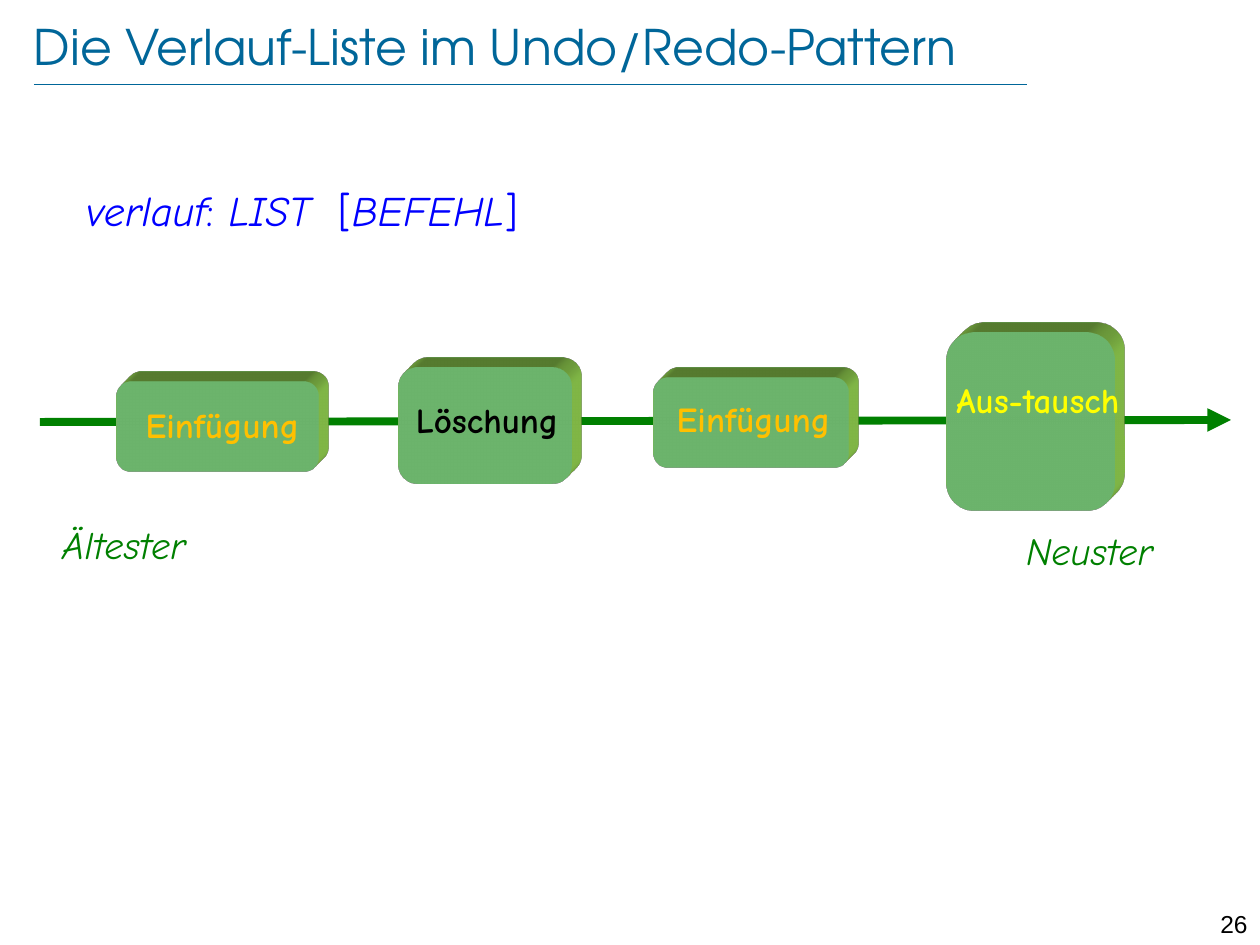
from dataclasses import dataclass

from lxml import etree
from pptx import Presentation
from pptx.dml.color import RGBColor
from pptx.enum.shapes import MSO_CONNECTOR, MSO_SHAPE
from pptx.enum.text import MSO_ANCHOR, PP_ALIGN
from pptx.oxml import parse_xml
from pptx.oxml.ns import nsdecls, qn
from pptx.util import Emu, Pt

LEFT, MID, RIGHT = PP_ALIGN.LEFT, PP_ALIGN.CENTER, PP_ALIGN.RIGHT
TOP, MIDDLE = MSO_ANCHOR.TOP, MSO_ANCHOR.MIDDLE
ROUND, LINE = MSO_SHAPE.ROUNDED_RECTANGLE, MSO_CONNECTOR.STRAIGHT

TEAL = RGBColor(0x00, 0x66, 0x99)
BLUE = RGBColor(0x00, 0x00, 0xFF)
GREEN = RGBColor(0x00, 0x80, 0x00)
BLACK = RGBColor(0x00, 0x00, 0x00)
ORANGE = RGBColor(0xFF, 0xC0, 0x00)
YELLOW = RGBColor(0xFF, 0xFF, 0x00)
MINT = RGBColor(0x99, 0xFF, 0x99)
LIME = RGBColor(0x92, 0xD0, 0x50)

COMIC, TITLE, SANS = "Comic Neue", "TeX Gyre Adventor", "Arial"
CURVE = 0.167
DEPTH = 28


def px(n: int) -> Emu:
    return Emu(round(n * 914400 / 126))


@dataclass
class Area:
    x: int
    y: int
    w: int
    h: int

    def emu(self) -> tuple:
        return px(self.x), px(self.y), px(self.w), px(self.h)


@dataclass
class Step:
    """A command in the history: its solid block and its label."""
    block: Area
    label: Area
    text: str
    color: RGBColor
    framed: bool = False


@dataclass
class Note:
    area: Area
    text: str | tuple
    size: int
    color: RGBColor
    align: int = MID
    italic: bool = True
    font: str = COMIC


STEPS = [
    Step(Area(654, 378, 195, 90), Area(646, 388, 215, 60), "Einfügung", ORANGE, True),
    Step(Area(947, 333, 168, 178), Area(937, 372, 202, 97), "Aus-tausch", YELLOW),
    Step(Area(399, 367, 173, 117), Area(389, 392, 196, 56), "Löschung", BLACK),
    Step(Area(117, 382, 202, 90), Area(115, 394, 215, 60), "Einfügung", ORANGE, True),
]
NOTES = [
    Note(Area(74, 178, 1156, 63),
         ("verlauf", ": ", "LIST  ", "[", "BEFEHL", "]"), 24, BLUE, LEFT),
    Note(Area(20, 515, 208, 59), "Ältester", 22, GREEN),
    Note(Area(911, 521, 357, 59), "Neuster", 22, GREEN),
    Note(Area(1191, 903, 69, 30), "26", 14, BLACK, RIGHT, False, SANS),
]


def write(frame, text: str | tuple, *, size: int, color: RGBColor,
          font: str = COMIC, align: int = MID, anchor: int = TOP,
          bold: bool = False, italic: bool = False) -> None:
    """Fill a frame; a tuple of parts switches italics from part to part."""
    frame.word_wrap = True
    frame.vertical_anchor = anchor
    par = frame.paragraphs[0]
    par.alignment = align
    for i, part in enumerate((text,) if isinstance(text, str) else text):
        run = par.add_run()
        run.text = part
        run.font.name, run.font.size = font, Pt(size)
        run.font.bold = bold
        run.font.italic = italic and i % 2 == 0
        run.font.color.rgb = color


def add_text(slide, area: Area, text: str | tuple, **style) -> None:
    write(slide.shapes.add_textbox(*area.emu()).text_frame, text, **style)


def add_line(slide, start: tuple, end: tuple, color: RGBColor,
             width: float, arrow: bool = False) -> None:
    line = slide.shapes.add_connector(LINE, *map(px, start + end))
    line.line.color.rgb = color
    line.line.width = Pt(width)
    if arrow:
        tip = etree.SubElement(line.line._get_or_add_ln(), qn("a:tailEnd"))
        tip.set("type", "triangle")
    etree.SubElement(line._element.spPr, qn("a:effectLst"))


def add_round(slide, area: Area):
    shape = slide.shapes.add_shape(ROUND, *area.emu())
    shape.adjustments[0] = CURVE
    shape.shadow.inherit = False
    shape.fill.background()
    shape.line.fill.background()
    return shape


def extrude(shape, color: RGBColor) -> None:
    """Give a shape solid depth towards the top right."""
    props = shape._element.spPr
    props.append(parse_xml(
        f'<a:scene3d {nsdecls("a")}>'
        '<a:camera prst="legacyObliqueTopRight"/>'
        '<a:lightRig rig="legacyFlat3" dir="b"/></a:scene3d>'))
    props.append(parse_xml(
        f'<a:sp3d {nsdecls("a")} extrusionH="{px(DEPTH)}" prstMaterial="legacyMatte">'
        f'<a:extrusionClr><a:srgbClr val="{color}"/></a:extrusionClr></a:sp3d>'))


def add_step(slide, step: Step) -> None:
    block = add_round(slide, step.block)
    block.fill.solid()
    block.fill.fore_color.rgb = MINT
    extrude(block, LIME)
    style = dict(size=20, color=step.color, bold=True)
    if step.framed:
        write(add_round(slide, step.label).text_frame, step.text, **style)
    else:
        add_text(slide, step.label, step.text, **style)


def add_title(slide, area: Area, text: str) -> None:
    title = slide.shapes.title
    title.left, title.top, title.width, title.height = area.emu()
    frame = title.text_frame
    frame.margin_left = frame.margin_right = 0
    frame.margin_top = frame.margin_bottom = 0
    write(frame, text, size=28, color=TEAL, font=TITLE, align=LEFT, anchor=MIDDLE)


def main() -> None:
    deck = Presentation()
    deck.slide_width, deck.slide_height = px(1260), px(945)
    slide = deck.slides.add_slide(deck.slide_layouts[5])
    add_title(slide, Area(34, 16, 1095, 60), "Die Verlauf-Liste im Undo/Redo-Pattern")
    add_line(slide, (34, 84), (1027, 84), TEAL, 0.25)
    for note in NOTES:
        add_text(slide, note.area, note.text, size=note.size, color=note.color,
                 font=note.font, align=note.align, italic=note.italic)
    add_line(slide, (40, 422), (1231, 420), GREEN, 4.5, arrow=True)
    for step in STEPS:
        add_step(slide, step)
    deck.save("out.pptx")


if __name__ == "__main__":
    main()
